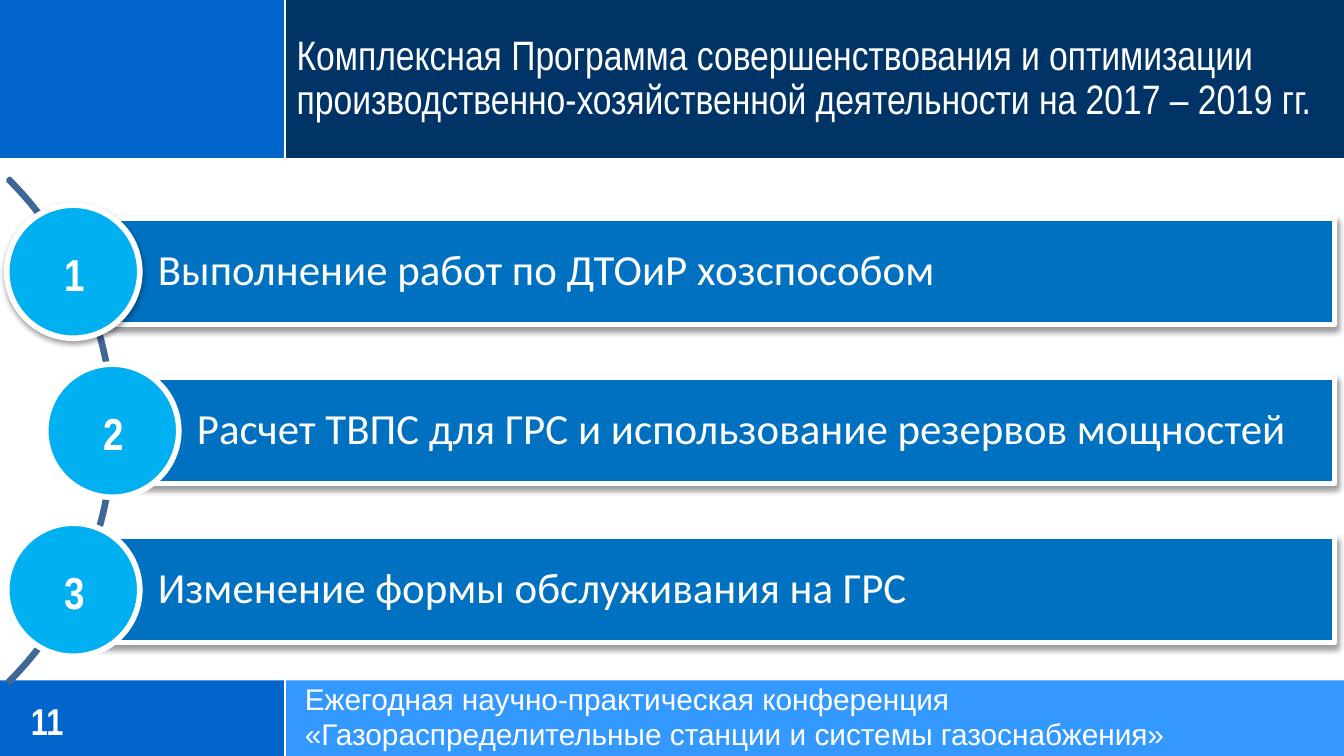
import collections

import pptx
import pptx.dml.color
import pptx.enum.shapes
import pptx.enum.text
import pptx.oxml
import pptx.oxml.ns
import pptx.util

Box = collections.namedtuple("Box", "left top width height")
SHAPES = pptx.enum.shapes.MSO_SHAPE
ANCHORS = pptx.enum.text.MSO_ANCHOR
WIDTH = 10
HEIGHT = WIDTH * 9 / 16
SIDE = 0.212 * WIDTH          # left column, shared by header and footer
HEADER = 0.21 * HEIGHT
FOOTER = 0.9 * HEIGHT         # top of the footer
WHITE = "FFFFFF"
STEPS = [
    "Выполнение работ по ДТОиР хозспособом",
    "Расчет ТВПС для ГРС и использование резервов мощностей",
    "Изменение формы обслуживания на ГРС",
]


def color(value):
    return pptx.dml.color.RGBColor.from_string(value)


def inches(values):
    return [pptx.util.Inches(value) for value in values]


def add_text(frame, lines, size, font="Arial Narrow", bold=False, spacing=None,
             anchor=ANCHORS.TOP, insets=(0.1, 0.05, 0.1, 0.05)):
    frame.word_wrap = True
    frame.vertical_anchor = anchor
    (frame.margin_left, frame.margin_top,
     frame.margin_right, frame.margin_bottom) = inches(insets)
    for index, line in enumerate(lines):
        paragraph = frame.add_paragraph() if index else frame.paragraphs[0]
        paragraph.alignment = pptx.enum.text.PP_ALIGN.LEFT
        if spacing:
            paragraph.line_spacing = spacing
        run = paragraph.add_run()
        run.text = line
        run.font.size = pptx.util.Pt(size)
        run.font.name = font
        run.font.bold = bold
        run.font.color.rgb = color(WHITE)


def add_label(slide, box, lines, size, **text_format):
    label = slide.shapes.add_textbox(*inches(box))
    add_text(label.text_frame, lines, size, **text_format)


def add_figure(slide, kind, box, fill=None, line=None, weight=3, shadow=False):
    figure = slide.shapes.add_shape(kind, *inches(box))
    figure.shadow.inherit = False
    if fill:
        figure.fill.solid()
        figure.fill.fore_color.rgb = color(fill)
    else:
        figure.fill.background()
    if line:
        figure.line.color.rgb = color(line)
        figure.line.width = pptx.util.Pt(weight)
    else:
        figure.line.fill.background()
    if shadow:
        effects = figure._element.spPr.find(pptx.oxml.ns.qn("a:effectLst"))
        effects.append(pptx.oxml.parse_xml(
            f'<a:outerShdw {pptx.oxml.ns.nsdecls("a")} blurRad="{pptx.util.Pt(3.1)}" '
            f'dist="{pptx.util.Pt(1.6)}" dir="5400000" rotWithShape="0">'
            '<a:srgbClr val="000000"><a:alpha val="38000"/></a:srgbClr></a:outerShdw>'))
    return figure


def add_rule(slide, start, end):
    rule = slide.shapes.add_connector(
        pptx.enum.shapes.MSO_CONNECTOR.STRAIGHT, *inches(start + end))
    rule.line.color.rgb = color(WHITE)
    rule.line.width = pptx.util.Pt(1.25)
    rule._element.spPr.append(pptx.oxml.parse_xml(
        f'<a:effectLst {pptx.oxml.ns.nsdecls("a")}/>'))


def add_band(slide, box, side_fill, main_fill, edge):
    """Two-colour band split at the side column, ruled along one edge."""
    split = box.left + SIDE
    add_figure(slide, SHAPES.RECTANGLE, box._replace(width=SIDE), side_fill)
    add_figure(slide, SHAPES.RECTANGLE,
               box._replace(left=split, width=box.width - SIDE), main_fill)
    add_rule(slide, (split, box.top), (split, box.top + box.height))
    add_rule(slide, (box.left, edge), (box.left + box.width, edge))


def add_header(slide, box):
    add_band(slide, box, "0066CC", "003366", box.top + box.height)
    title = Box(box.left + SIDE - 0.01, box.top + 0.21, box.width - SIDE - 0.01, 0.77)
    add_label(slide, title,
              ["Комплексная Программа совершенствования и оптимизации "
               "производственно-хозяйственной деятельности на 2017 – 2019 гг."],
              22, spacing=0.9)


def add_footer(slide, box):
    add_band(slide, box, "0066CC", "3399FF", box.top - 0.01)
    add_label(slide, Box(box.left + 0.23, box.top + 0.04, 1.62, 0.52), ["11"], 20,
              bold=True, anchor=ANCHORS.MIDDLE, insets=(0, 0, 0, 0))
    add_label(slide, Box(box.left + SIDE + 0.05, box.top - 0.05, 7.4, 0.64),
              ["Ежегодная научно-практическая конференция",
               "«Газораспределительные станции и системы газоснабжения»"],
              16, font="Arial")


def add_steps(slide, box):
    """Numbered bars in equal rows, strung along an arc."""
    row = box.height / len(STEPS)
    bar_height, circle = row * 2 / 3, 0.99
    right = box.left + box.width
    middle = box.top + box.height / 2

    # Arc from -45 to 45 degrees, centred on the middle row
    diameter = 5.31
    arc = add_figure(slide, SHAPES.BLOCK_ARC,
                     Box(box.left + 0.8 - diameter, middle - diameter / 2,
                         diameter, diameter),
                     line="3F6797", weight=2)
    for index, value in enumerate((189, 27, 0.004)):
        arc.adjustments[index] = value

    # Bars and circles; the middle row is shifted along the arc
    circles = []
    for index, step in enumerate(STEPS):
        left = box.left + (0.29 if index == 1 else 0)
        center = box.top + row * (index + 0.5)
        start = left + circle / 2
        bar = add_figure(slide, SHAPES.RECTANGLE,
                         Box(start, center - bar_height / 2, right - start, bar_height),
                         "0070C0", WHITE, shadow=True)
        add_text(bar.text_frame, [step], 23, font="Calibri", spacing=0.9,
                 anchor=ANCHORS.MIDDLE, insets=(0.63, 0.06, 0.06, 0.06))
        spot = Box(left, center - circle / 2, circle, circle)
        add_figure(slide, SHAPES.OVAL, spot, "00B0F0", WHITE, shadow=index == 0)
        circles.append(spot)

    # Numbers
    for number, spot in enumerate(circles, 1):
        add_label(slide, Box(spot.left + 0.33, spot.top + 0.26, 0.44, 0.5),
                  [str(number)], 24, bold=True)


def main():
    deck = pptx.Presentation()
    deck.slide_width, deck.slide_height = inches((WIDTH, HEIGHT))
    slide = deck.slides.add_slide(deck.slide_layouts[6])
    add_footer(slide, Box(0, FOOTER, WIDTH, HEIGHT - FOOTER))
    add_header(slide, Box(0, 0, WIDTH, HEADER))
    add_steps(slide, Box(0.05, 1.43, 9.88, 3.55))
    deck.save("out.pptx")


if __name__ == "__main__":
    main()
